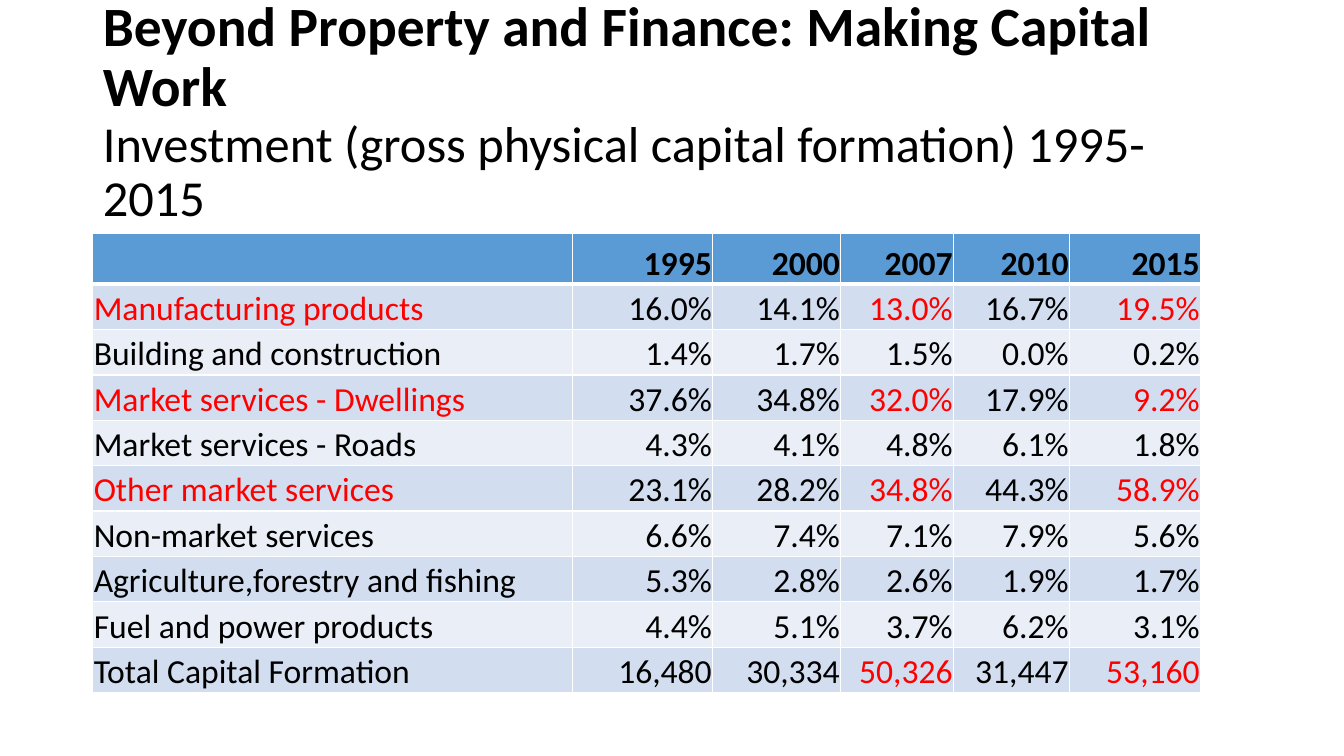
from lxml import etree
from pptx import Presentation
from pptx.dml.color import RGBColor
from pptx.enum import text
from pptx.oxml import ns
from pptx.util import Inches, Pt

HEADING = "Beyond Property and Finance: Making Capital Work "
SUBHEADING = "Investment (gross physical capital formation) 1995-2015"
YEARS = ["", "1995", "2000", "2007", "2010", "2015"]
INVESTMENT = [
    ["Manufacturing products", "16.0%", "14.1%", "13.0%", "16.7%", "19.5%"],
    ["Building and construction", "1.4%", "1.7%", "1.5%", "0.0%", "0.2%"],
    ["Market services - Dwellings", "37.6%", "34.8%", "32.0%", "17.9%", "9.2%"],
    ["Market services - Roads", "4.3%", "4.1%", "4.8%", "6.1%", "1.8%"],
    ["Other market services", "23.1%", "28.2%", "34.8%", "44.3%", "58.9%"],
    ["Non-market services", "6.6%", "7.4%", "7.1%", "7.9%", "5.6%"],
    ["Agriculture,forestry and fishing", "5.3%", "2.8%", "2.6%", "1.9%", "1.7%"],
    ["Fuel and power products", "4.4%", "5.1%", "3.7%", "6.2%", "3.1%"],
    ["Total Capital Formation", "16,480", "30,334", "50,326", "31,447", "53,160"],
]
# Columns shown in red, by row
HIGHLIGHTS = {1: (0, 3, 5), 3: (0, 3, 5), 5: (0, 3, 5), 9: (3, 5)}

COLUMN_WIDTHS = [4.76, 1.39, 1.27, 1.12, 1.15, 1.3]
HEADER_HEIGHT, ROW_HEIGHT = 0.5, 0.45
LEFT = 0.92
FONT = "Calibri"
COLORS = {
    "text": "000000",
    "highlight": "FF0000",
    "header": "5B9BD5",
    "odd": "D2DEEF",
    "even": "EAEFF7",
    "border": "FFFFFF",
}


def rgb(name):
    return RGBColor.from_string(COLORS[name])


def format_font(font, size, color="text", bold=False):
    font.name, font.size, font.bold = FONT, Pt(size), bold
    font.color.rgb = rgb(color)


def add_border(cell, side, width):
    """Draw one side (L, R, T or B) of a cell; call before filling the cell."""
    properties = cell._tc.get_or_add_tcPr()
    line = etree.SubElement(properties, ns.qn(f"a:ln{side}"), w=str(Pt(width)))
    solid = etree.SubElement(line, ns.qn("a:solidFill"))
    etree.SubElement(solid, ns.qn("a:srgbClr"), val=COLORS["border"])


def add_title(slide):
    title = slide.shapes.title
    title.left, title.top = Inches(LEFT), Inches(0.4)
    title.width, title.height = Inches(11.5), Inches(1.45)
    frame = title.text_frame
    frame.text = f"{HEADING}\v{SUBHEADING}"
    frame.word_wrap = True
    frame.auto_size = text.MSO_AUTO_SIZE.NONE
    frame.vertical_anchor = text.MSO_ANCHOR.MIDDLE
    paragraph = frame.paragraphs[0]
    paragraph.alignment = text.PP_ALIGN.LEFT
    paragraph.line_spacing = 0.9
    heading, subheading = paragraph.runs
    format_font(heading.font, 39.6, bold=True)
    format_font(subheading.font, 36)


def format_cell(cell, row, column):
    is_header = row == 0
    for side in "LRTB":
        if side != "T" or is_header:
            add_border(cell, side, 3 if is_header and side == "B" else 1)
    cell.fill.solid()
    band = "odd" if row % 2 else "even"
    cell.fill.fore_color.rgb = rgb("header" if is_header else band)
    cell.margin_left = cell.margin_right = cell.margin_top = Inches(0.01)
    cell.margin_bottom = 0
    cell.vertical_anchor = text.MSO_ANCHOR.BOTTOM
    paragraph = cell.text_frame.paragraphs[0]
    paragraph.alignment = text.PP_ALIGN.RIGHT if column else text.PP_ALIGN.LEFT
    color = "highlight" if column in HIGHLIGHTS.get(row, ()) else "text"
    for run in paragraph.runs:
        format_font(run.font, 24, color, bold=is_header)


def add_investment_table(slide):
    rows = [YEARS] + INVESTMENT
    heights = [HEADER_HEIGHT] + [ROW_HEIGHT] * len(INVESTMENT)
    table = slide.shapes.add_table(
        len(rows), len(YEARS), Inches(LEFT), Inches(2.32),
        Inches(sum(COLUMN_WIDTHS)), Inches(sum(heights))).table
    for column, width in zip(table.columns, COLUMN_WIDTHS):
        column.width = Inches(width)
    for row, height in zip(table.rows, heights):
        row.height = Inches(height)
    for r, values in enumerate(rows):
        for c, value in enumerate(values):
            cell = table.cell(r, c)
            if value:
                cell.text_frame.text = value
            format_cell(cell, r, c)


def main():
    deck = Presentation()
    deck.slide_width, deck.slide_height = Inches(13.33), Inches(7.5)
    slide = deck.slides.add_slide(deck.slide_layouts.get_by_name("Title Only"))
    add_title(slide)
    add_investment_table(slide)
    deck.save("out.pptx")


if __name__ == "__main__":
    main()
